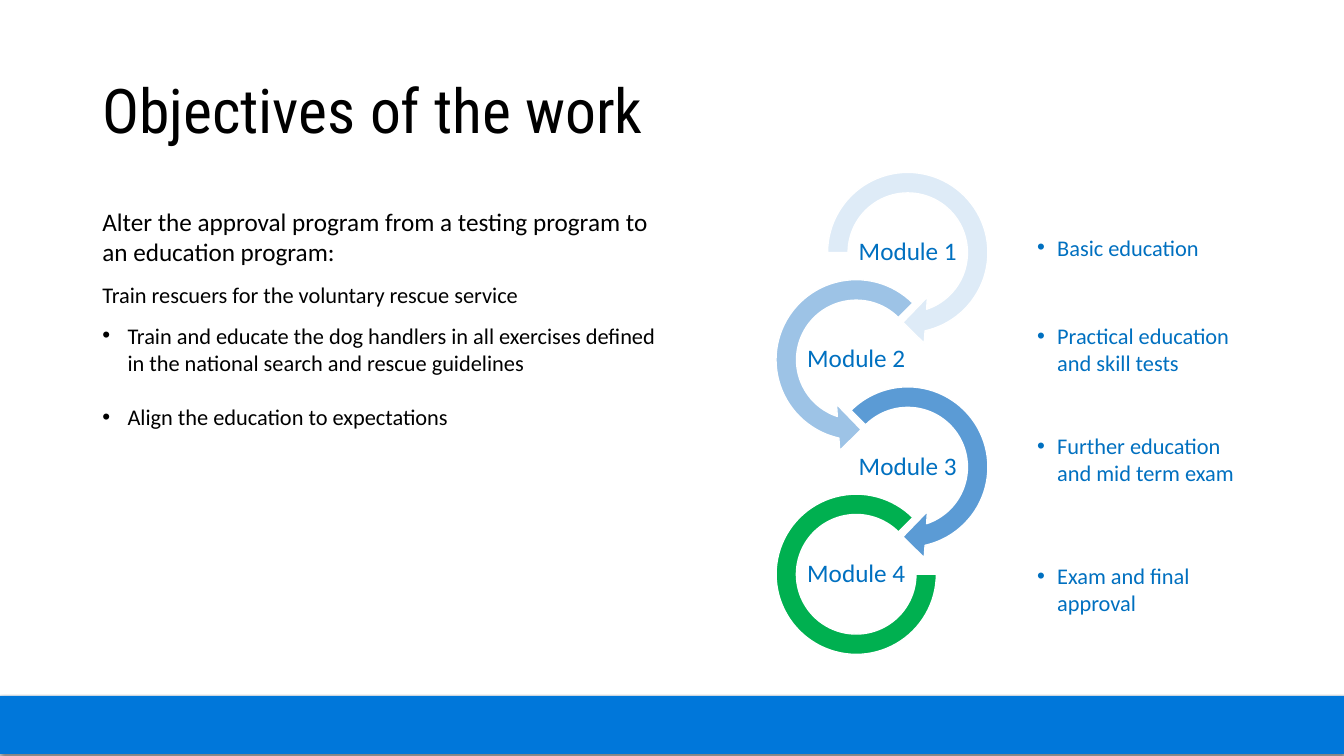
from dataclasses import dataclass

import pptx
import pptx.dml.color
import pptx.enum.shapes
import pptx.enum.text
import pptx.oxml
import pptx.oxml.ns
import pptx.util

Pt = pptx.util.Pt
Shapes = pptx.enum.shapes.MSO_SHAPE
Anchor = pptx.enum.text.MSO_ANCHOR
Align = pptx.enum.text.PP_ALIGN


@dataclass(frozen=True)
class Theme:
    heading_font: str = "Roboto Condensed"
    body_font: str = "Calibri"
    title_size: float = 44
    lead_size: float = 18
    text_size: float = 16
    ink: str = "000000"
    accent: str = "0070C0"
    band: str = "0077DA"
    white: str = "FFFFFF"
    ring_colors: tuple = ("DEEBF7", "9DC3E6", "5B9BD5", "00B050")


THEME = Theme()

# shape, diameter, adjustments
RINGS = [
    (Shapes.CIRCULAR_ARROW, 133.2, (0.11, 11.42, 45, 108, 0.125)),
    (Shapes.LEFT_CIRCULAR_ARROW, 133.2, (0.11, 11.42, 63, 189, 0.125)),
    (Shapes.CIRCULAR_ARROW, 133.2, (0.11, 11.42, 45, 135, 0.125)),
    (Shapes.BLOCK_ARC, 114.5, (0, 189, 0.127)),
]

# text, top within the column, width
MODULE_NOTES = [
    ("Basic education", 0, 172.8),
    ("Practical education and skill tests", 63.4, 162.7),
    ("Further education and mid term exam", 141.8, 172.8),
    ("Exam and final approval", 234.7, 172.8),
]


def rgb(color):
    return pptx.dml.color.RGBColor.from_string(color)


def add_text_box(page, left, top, width, height, anchor=Anchor.TOP):
    box = page.shapes.add_textbox(Pt(left), Pt(top), Pt(width), Pt(height))
    box.text_frame.word_wrap = True
    box.text_frame.vertical_anchor = anchor
    return box.text_frame


def add_bullet(para, indent):
    properties = para._p.get_or_add_pPr()
    properties.set("marL", str(Pt(indent)))
    properties.set("indent", str(-Pt(indent)))
    namespace = pptx.oxml.ns.nsdecls("a")
    properties.append(pptx.oxml.parse_xml(f'<a:buFont {namespace} typeface="Arial"/>'))
    properties.append(pptx.oxml.parse_xml(f'<a:buChar {namespace} char="•"/>'))


def style_para(para, size, color, font=THEME.body_font):
    for span in para.runs:
        span.font.name = font
        span.font.size = Pt(size)
        span.font.color.rgb = rgb(color)


def add_band(page, left, top, width, height):
    band = page.shapes.add_shape(Shapes.RECTANGLE, Pt(left), Pt(top), Pt(width), Pt(height))
    band.fill.solid()
    band.fill.fore_color.rgb = rgb(THEME.band)
    band.line.fill.background()
    band.shadow.inherit = False
    effects = band._element.spPr.find(pptx.oxml.ns.qn("a:effectLst"))
    effects.append(pptx.oxml.parse_xml(
        f'<a:outerShdw {pptx.oxml.ns.nsdecls("a")} blurRad="{Pt(3)}" dist="{Pt(2)}" '
        'dir="5400000" rotWithShape="0"><a:srgbClr val="000000">'
        '<a:alpha val="50000"/></a:srgbClr></a:outerShdw>'))


def add_title(page, left, top, width, height):
    frame = add_text_box(page, left, top, width, height, Anchor.MIDDLE)
    frame.text = "Objectives of the work"
    para = frame.paragraphs[0]
    para.line_spacing = 0.9
    style_para(para, THEME.title_size, THEME.ink, THEME.heading_font)


def add_objectives(page, left, top, width, height):
    frame = add_text_box(page, left, top, width, height)
    # text, size, bulleted, line spacing
    objectives = [
        ("Alter the approval program from a testing program to an education program:",
         THEME.lead_size, False, 1.0),
        ("Train rescuers for the voluntary rescue service", THEME.text_size, False, 1.0),
        ("Train and educate the dog handlers in all exercises defined in the national "
         "search and rescue guidelines", THEME.text_size, True, 1.0),
        ("Align the education to expectations", THEME.text_size, True, 1.5),
    ]
    for index, (text, size, bulleted, spacing) in enumerate(objectives):
        para = frame.add_paragraph() if index else frame.paragraphs[0]
        para.text = text
        if bulleted:
            add_bullet(para, 18)
        para.line_spacing = spacing
        if index:
            para.space_before = Pt(10)
        style_para(para, size, THEME.ink)


def add_ring(page, center_x, center_y, ring, color):
    kind, diameter, adjustments = ring
    shape = page.shapes.add_shape(
        kind, Pt(center_x - diameter / 2), Pt(center_y - diameter / 2), Pt(diameter), Pt(diameter))
    for index, value in enumerate(adjustments):
        shape.adjustments[index] = value
    shape.fill.solid()
    shape.fill.fore_color.rgb = rgb(color)
    shape.line.color.rgb = rgb(THEME.white)
    shape.line.width = Pt(1)
    shape.shadow.inherit = False


def add_ring_label(page, center_x, center_y, text):
    width, height = 74, 37.4
    frame = add_text_box(
        page, center_x - width / 2, center_y - height / 2, width, height, Anchor.MIDDLE)
    frame.margin_left = frame.margin_right = Pt(0.8)
    frame.margin_top = frame.margin_bottom = Pt(0.8)
    frame.text = text
    para = frame.paragraphs[0]
    para.alignment = Align.CENTER
    para.line_spacing = 0.9
    style_para(para, THEME.lead_size, THEME.accent)


def add_module_chain(page, left, top, width):
    """Rings alternate between the right and left edge of the given width."""
    radius, pitch = 66.6, 76.6
    for index, (ring, color) in enumerate(zip(RINGS, THEME.ring_colors)):
        center_x = left + (radius if index % 2 else width - radius)
        center_y = top + radius + index * pitch
        add_ring(page, center_x, center_y, ring, color)
        add_ring_label(page, center_x, center_y, f"Module {index + 1}")


def add_module_notes(page, left, top):
    for text, offset, width in MODULE_NOTES:
        frame = add_text_box(page, left, top + offset, width, 46)
        frame.text = text
        para = frame.paragraphs[0]
        add_bullet(para, 14.4)
        style_para(para, THEME.text_size, THEME.accent)


def main():
    deck = pptx.Presentation()
    deck.slide_width, deck.slide_height = Pt(960), Pt(540)
    page = deck.slides.add_slide(deck.slide_layouts[6])
    add_band(page, 0, 497, 960, 41.5)
    add_title(page, 66, 28.8, 828, 104.4)
    add_objectives(page, 66, 144, 414, 342.7)
    add_module_chain(page, 545, 113.8, 170)
    add_module_notes(page, 733.7, 163.4)
    deck.save("out.pptx")


if __name__ == "__main__":
    main()
